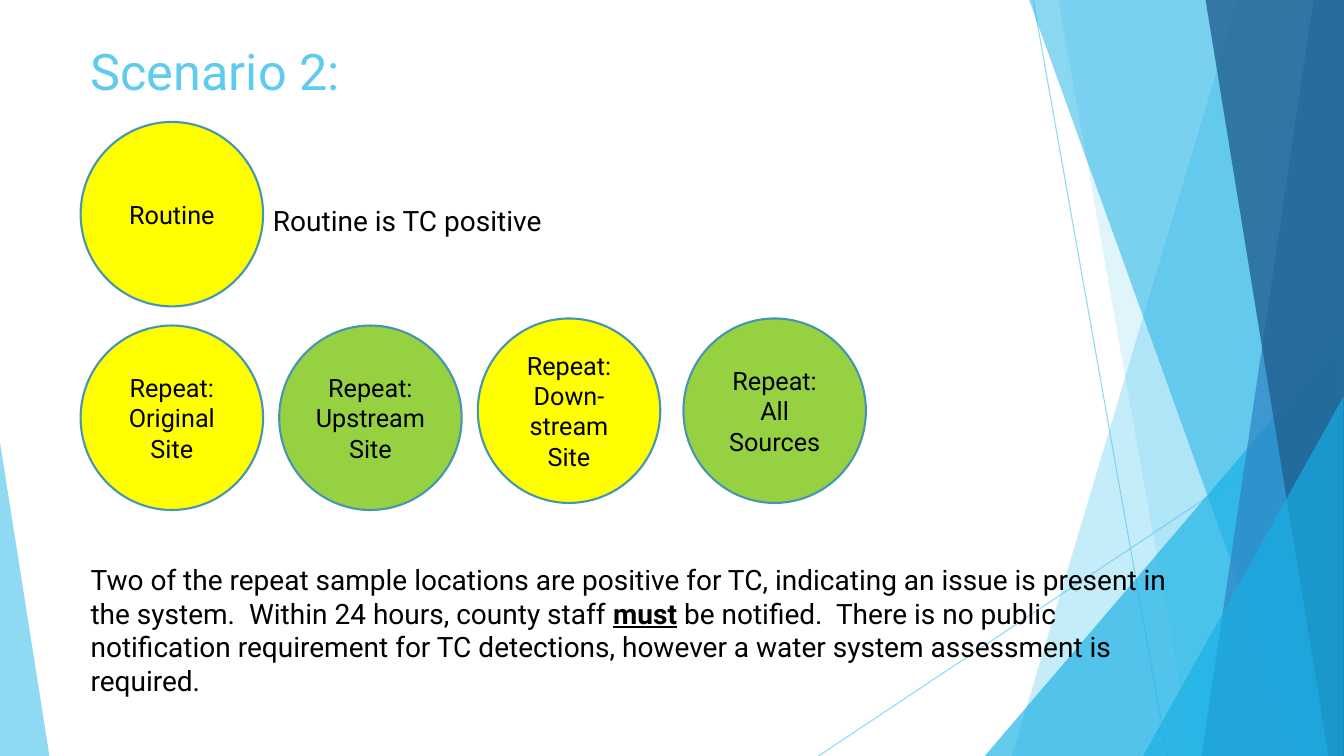
from dataclasses import dataclass
from typing import Any, NamedTuple

from lxml import etree
from pptx import Presentation
from pptx import util as u
from pptx.dml.color import RGBColor
from pptx.enum import shapes, text
from pptx.oxml.ns import qn


@dataclass(frozen=True)
class Theme:
    font: str = "Roboto"
    sky: str = "5FCBEF"
    cyan: str = "17B0E4"
    blue: str = "2E83C3"
    navy: str = "226292"
    rim: str = "4696B1"
    yellow: str = "FFFF00"
    green: str = "96D141"
    black: str = "000000"
    title: int = 36
    body: int = 20
    label: int = 18
    thin: float = 0.75
    edge: float = 1.5


class Box(NamedTuple):
    col: float
    row: float
    wide: float
    high: float


class Facet(NamedTuple):
    top: float  # left corner on the top edge
    foot: float  # left corner on the bottom edge
    color: str
    alpha: int


class Wedge(NamedTuple):
    box: Box
    tip: float
    color: str
    alpha: int


class Ray(NamedTuple):
    start: tuple[float, float]
    end: tuple[float, float]


class Disc(NamedTuple):
    col: float
    row: float
    fill: str
    lines: tuple[str, ...]


T = Theme()

# The grid has ten columns and ten rows to the inch
COLS, ROWS = 133.33, 75
EDGE = 8  # left margin
WIDE, HIGH = 18.1, 18.3  # disc size
STEP = 19.7  # disc pitch
INSET = 0.8  # side margin of a disc label

RAYS = [Ray((102.5, 0), (115.8, ROWS)), Ray((COLS, 40.3), (81.2, ROWS))]
BACK = [Facet(122.8, 100.4, T.sky, 36), Facet(105, 118.3, T.sky, 20)]
FRONT = [
    Facet(102.1, 129.1, T.cyan, 50),
    Facet(130.3, 119.2, T.blue, 70),
    Facet(119.6, 131.8, T.navy, 80),
]
MIDDLE = Wedge(Box(97.7, 33.3, 35.6, 41.7), 1, T.cyan, 66)
ENDS = [
    Wedge(Box(113.4, 39.3, 19.9, 35.7), 1, T.cyan, 66),
    Wedge(Box(0, 43.9, 4.9, 31.1), 0, T.sky, 70),
]
DISCS = [
    Disc(EDGE, 12.1, T.yellow, ("Routine",)),
    Disc(EDGE, 32.3, T.yellow, ("Repeat:", "Original Site")),
    Disc(EDGE + STEP, 32.3, T.green, ("Repeat:", "Upstream Site")),
    Disc(EDGE + 2 * STEP, 31.6, T.yellow, ("Repeat:", "Down-stream Site")),
    Disc(67.8, 31.6, T.green, ("Repeat:", "All Sources")),
]
NOTES = [
    (Box(26.1, 19.7, 94, 4.8), [("Routine is TC positive", False)]),
    (Box(EDGE, 55.3, 108.9, 13.1), [
        ("Two of the repeat sample locations are positive for TC, indicating "
         "an issue is present in the system.  Within 24 hours, county staff ", False),
        ("must", True),
        (" be notified.  There is no public notification requirement for TC "
         "detections, however a water system assessment is required.", False),
    ]),
]


def cell(num: float) -> int:
    return u.Inches(num / 10)


def place(box: Box) -> list[int]:
    return [cell(num) for num in box]


def fade(node: Any, alpha: int) -> None:
    """Set the opacity, in percent, of the first colour under a node."""
    color = next(node.iter(qn("a:srgbClr")))
    etree.SubElement(color, qn("a:alpha")).set("val", str(alpha * 1000))


def paint(shape: Any, color: str, alpha: int = 100) -> None:
    shape.shadow.inherit = False
    shape.fill.solid()
    shape.fill.fore_color.rgb = RGBColor.from_string(color)
    if alpha < 100:
        fade(shape.fill._xPr, alpha)


def style(item: Any, form: dict[str, Any]) -> None:
    for key, val in form.items():
        setattr(item, key, val)


def write(para: Any, words: str, size: int, color: str = T.black,
          strong: bool = False) -> None:
    run = para.add_run()
    run.text = words
    style(run.font, {"name": T.font, "size": u.Pt(size),
                     "bold": strong, "underline": strong})
    run.font.color.rgb = RGBColor.from_string(color)


def draw_ray(slide: Any, ray: Ray) -> None:
    ends = [cell(num) for num in (*ray.start, *ray.end)]
    line = slide.shapes.add_connector(shapes.MSO_CONNECTOR.STRAIGHT, *ends)
    line.line.width = u.Pt(T.thin)
    line.line.color.rgb = RGBColor.from_string(T.sky)
    props = line._element.spPr
    fade(props, 70)
    etree.SubElement(props, qn("a:effectLst"))


def draw_facet(slide: Any, facet: Facet) -> None:
    pen = slide.shapes.build_freeform(cell(facet.top), 0)
    spots = [(COLS, 0), (COLS, ROWS), (facet.foot, ROWS)]
    pen.add_line_segments([(cell(x), cell(y)) for x, y in spots], close=True)
    shape = pen.convert_to_shape()
    paint(shape, facet.color, facet.alpha)
    shape.line.fill.background()


def draw_wedge(slide: Any, wedge: Wedge) -> None:
    kind = shapes.MSO_SHAPE.ISOSCELES_TRIANGLE
    shape = slide.shapes.add_shape(kind, *place(wedge.box))
    shape.adjustments[0] = wedge.tip
    paint(shape, wedge.color, wedge.alpha)
    shape.line.fill.background()


def draw_disc(slide: Any, disc: Disc) -> None:
    kind = shapes.MSO_SHAPE.FLOWCHART_CONNECTOR
    shape = slide.shapes.add_shape(kind, *place(Box(disc.col, disc.row, WIDE, HIGH)))
    paint(shape, disc.fill)
    shape.line.color.rgb = RGBColor.from_string(T.rim)
    shape.line.width = u.Pt(T.edge)
    frame = shape.text_frame
    style(frame, {"vertical_anchor": text.MSO_ANCHOR.MIDDLE, "word_wrap": True,
                  "margin_left": cell(INSET), "margin_right": cell(INSET)})
    for num, words in enumerate(disc.lines):
        para = frame.add_paragraph() if num else frame.paragraphs[0]
        para.alignment = text.PP_ALIGN.CENTER
        write(para, words, T.label)


def draw_note(slide: Any, box: Box, parts: list[tuple[str, bool]]) -> None:
    frame = slide.shapes.add_textbox(*place(box)).text_frame
    frame.word_wrap = True
    for words, strong in parts:
        write(frame.paragraphs[0], words, T.body, strong=strong)


def draw_title(slide: Any, words: str) -> None:
    title = slide.shapes.title
    spot = place(Box(EDGE, 3.5, 94, 8))
    style(title, dict(zip(("left", "top", "width", "height"), spot)))
    frame = title.text_frame
    style(frame, {"auto_size": text.MSO_AUTO_SIZE.NONE,
                  "vertical_anchor": text.MSO_ANCHOR.TOP})
    frame.paragraphs[0].alignment = text.PP_ALIGN.LEFT
    write(frame.paragraphs[0], words, T.title, T.sky)


def main() -> None:
    deck = Presentation()
    deck.slide_width, deck.slide_height = cell(COLS), cell(ROWS)
    slide = deck.slides.add_slide(deck.slide_layouts[5])

    # Faceted backdrop
    for ray in RAYS:
        draw_ray(slide, ray)
    for facet in BACK:
        draw_facet(slide, facet)
    draw_wedge(slide, MIDDLE)
    for facet in FRONT:
        draw_facet(slide, facet)
    for wedge in ENDS:
        draw_wedge(slide, wedge)

    # Title, sample sites and notes
    draw_title(slide, "Scenario 2:")
    for disc in DISCS:
        draw_disc(slide, disc)
    for box, parts in NOTES:
        draw_note(slide, box, parts)

    deck.save("out.pptx")


if __name__ == "__main__":
    main()
